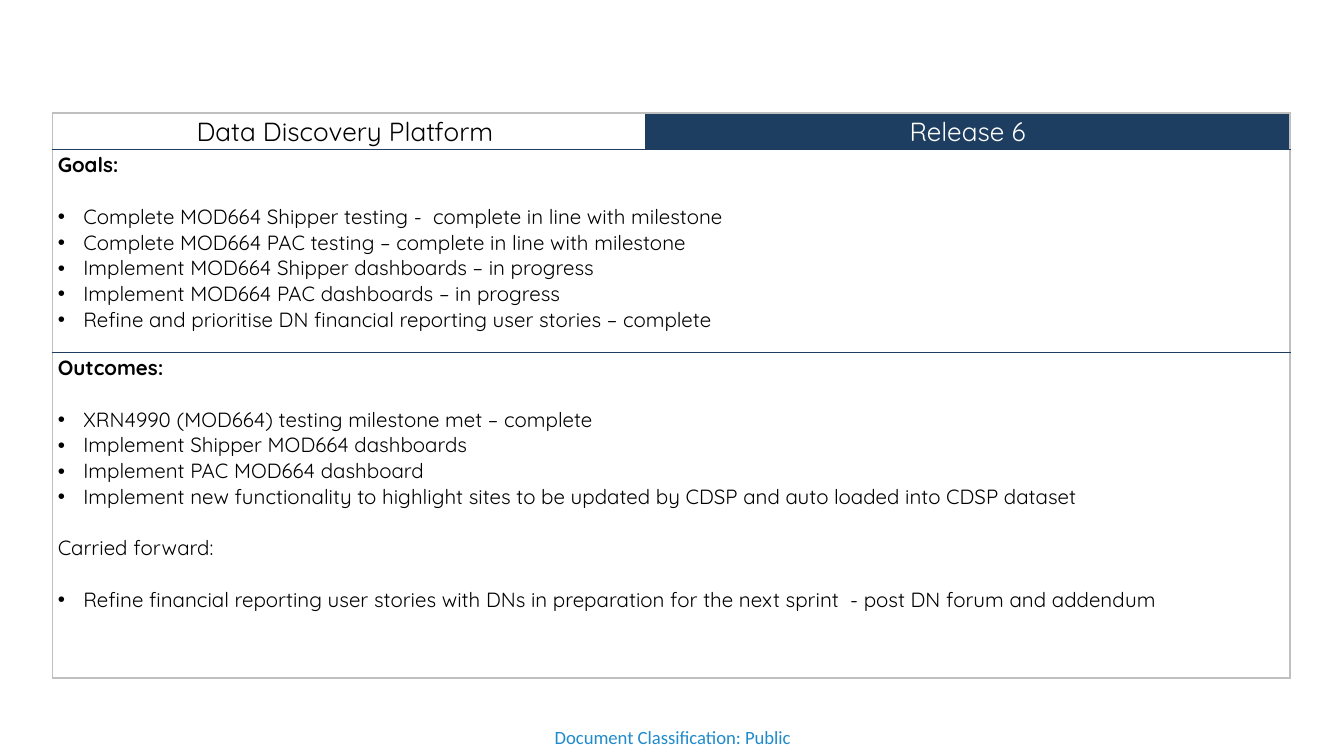
from dataclasses import dataclass

from lxml import etree
from pptx import Presentation, util as u
from pptx.dml.color import RGBColor
from pptx.enum import text
from pptx.oxml import ns


@dataclass
class Theme:
    navy: str = "1D3E61"
    grey: str = "BFBFBF"
    blue: str = "208BCC"
    black: str = "000000"
    white: str = "FFFFFF"
    font: str = "Quicksand"
    plain: str = "Calibri"
    head: float = 14
    body: float = 11
    foot: float = 10
    gap: float = 13.75  # one body line


HEADS = ["Data Discovery Platform ", "Release 6"]

# Each block: its lead line, whether that is bold, and its bullets
GOALS = [
    ("Goals:", True, [
        "Complete MOD664 Shipper testing -  complete in line with milestone",
        "Complete MOD664 PAC testing – complete in line with milestone",
        "Implement MOD664 Shipper dashboards – in progress",
        "Implement MOD664 PAC dashboards – in progress",
        "Refine and prioritise DN financial reporting user stories – complete",
    ]),
]
OUTCOMES = [
    ("Outcomes:", True, [
        "XRN4990 (MOD664) testing milestone met – complete",
        "Implement Shipper MOD664 dashboards",
        "Implement PAC MOD664 dashboard",
        "Implement new functionality to highlight sites to be updated by CDSP "
        "and auto loaded into CDSP dataset",
    ]),
    ("Carried forward:", False, [
        "Refine financial reporting user stories with DNs in preparation for "
        "the next sprint  - post DN forum and addendum",
    ]),
]


class Deck:
    def __init__(self, theme):
        self.theme = theme
        self.prs = Presentation()
        wide = u.Inches(10)
        self.prs.slide_width, self.prs.slide_height = wide, wide * 9 // 16
        self.slide = self.prs.slides.add_slide(self.prs.slide_layouts[6])

    def style(self, para, color, **form):
        for name, value in form.items():
            setattr(para.font, name, value)
        para.font.color.rgb = RGBColor.from_string(color)

    def note(self, words, box):
        """Add a centred line of text."""
        frame = self.slide.shapes.add_textbox(*map(u.Inches, box)).text_frame
        form = dict(margin_left=0, margin_right=0, margin_top=0, margin_bottom=0,
                    word_wrap=True, vertical_anchor=text.MSO_ANCHOR.MIDDLE)
        for name, value in form.items():
            setattr(frame, name, value)
        para = frame.paragraphs[0]
        para.text, para.alignment = words, text.PP_ALIGN.CENTER
        self.style(para, self.theme.blue, name=self.theme.plain,
                   size=u.Pt(self.theme.foot))

    def grid(self, spot, cols, rows):
        """Add a plain table with grey sides and navy row rules."""
        size = (sum(cols), sum(rows))
        table = self.slide.shapes.add_table(
            len(rows), len(cols), *map(u.Inches, spot + size)).table
        table.first_row = table.horz_banding = False
        for col, width in zip(table.columns, cols):
            col.width = u.Inches(width)
        for row, height in zip(table.rows, rows):
            row.height = u.Inches(height)
        grey, navy = self.theme.grey, self.theme.navy
        form = dict(margin_left=u.Inches(0.04), margin_right=u.Inches(0.04),
                    margin_top=u.Inches(0.02), margin_bottom=u.Inches(0.01))
        for r in range(len(rows)):
            if r:  # rows below the heading span all columns
                table.cell(r, 0).merge(table.cell(r, len(cols) - 1))
            for c in range(len(cols)):
                cell = table.cell(r, c)
                for name, value in form.items():
                    setattr(cell, name, value)
                cell.fill.background()
                self.edge(cell, {
                    "L": grey if r or c == 0 else None,
                    "R": grey if r or c == len(cols) - 1 else None,
                    "T": navy if r else grey,
                    "B": navy if r < len(rows) - 1 else grey,
                })
        return table

    def edge(self, cell, sides):
        """Draw the four cell borders; None leaves a side open."""
        props = cell._tc.get_or_add_tcPr()
        for spot, (side, color) in enumerate(sides.items()):
            line = etree.Element(ns.qn(f"a:ln{side}"), w=str(u.Pt(1)))
            if color:
                fill = etree.SubElement(line, ns.qn("a:solidFill"))
                etree.SubElement(fill, ns.qn("a:srgbClr"), val=color)
            else:
                etree.SubElement(line, ns.qn("a:noFill"))
            props.insert(spot, line)

    def head(self, cell, words, color, fill=None):
        """Fill a heading cell."""
        cell.vertical_anchor = text.MSO_ANCHOR.MIDDLE
        if fill:
            cell.fill.solid()
            cell.fill.fore_color.rgb = RGBColor.from_string(fill)
        para = cell.text_frame.paragraphs[0]
        para.text, para.alignment = words, text.PP_ALIGN.CENTER
        self.style(para, color, name=self.theme.font, size=u.Pt(self.theme.head))

    def list(self, cell, blocks):
        """Fill a cell with lead lines and their bullets."""
        frame = cell.text_frame
        for b, (lead, bold, items) in enumerate(blocks):
            para = frame.add_paragraph() if b else frame.paragraphs[0]
            self.line(para, lead, bold, gap=b > 0)
            for i, item in enumerate(items):
                para = frame.add_paragraph()
                self.mark(para)
                self.line(para, item, False, gap=i == 0)

    def mark(self, para):
        """Give a paragraph a hanging bullet."""
        props = para._p.get_or_add_pPr()
        hang = u.Inches(0.19)
        props.set("marL", str(hang))
        props.set("indent", str(-hang))
        etree.SubElement(props, ns.qn("a:buFont"), typeface="Arial")
        etree.SubElement(props, ns.qn("a:buChar"), char="•")

    def line(self, para, words, bold, gap):
        para.text = words
        if gap:
            para.space_before = u.Pt(self.theme.gap)
        self.style(para, self.theme.black, name=self.theme.font,
                   size=u.Pt(self.theme.body), bold=bold)


def main():
    theme = Theme()
    deck = Deck(theme)

    # Release table
    table = deck.grid((0.39, 0.84), (4.41, 4.8), (0.27, 1.51, 2.42))
    deck.head(table.cell(0, 0), HEADS[0], theme.black)
    deck.head(table.cell(0, 1), HEADS[1], theme.white, theme.navy)
    for row, blocks in enumerate((GOALS, OUTCOMES), 1):
        deck.list(table.cell(row, 0), blocks)

    # Classification line
    deck.note("Document Classification: Public", (3.95, 5.34, 2.11, 0.29))
    deck.prs.save("out.pptx")


if __name__ == "__main__":
    main()
